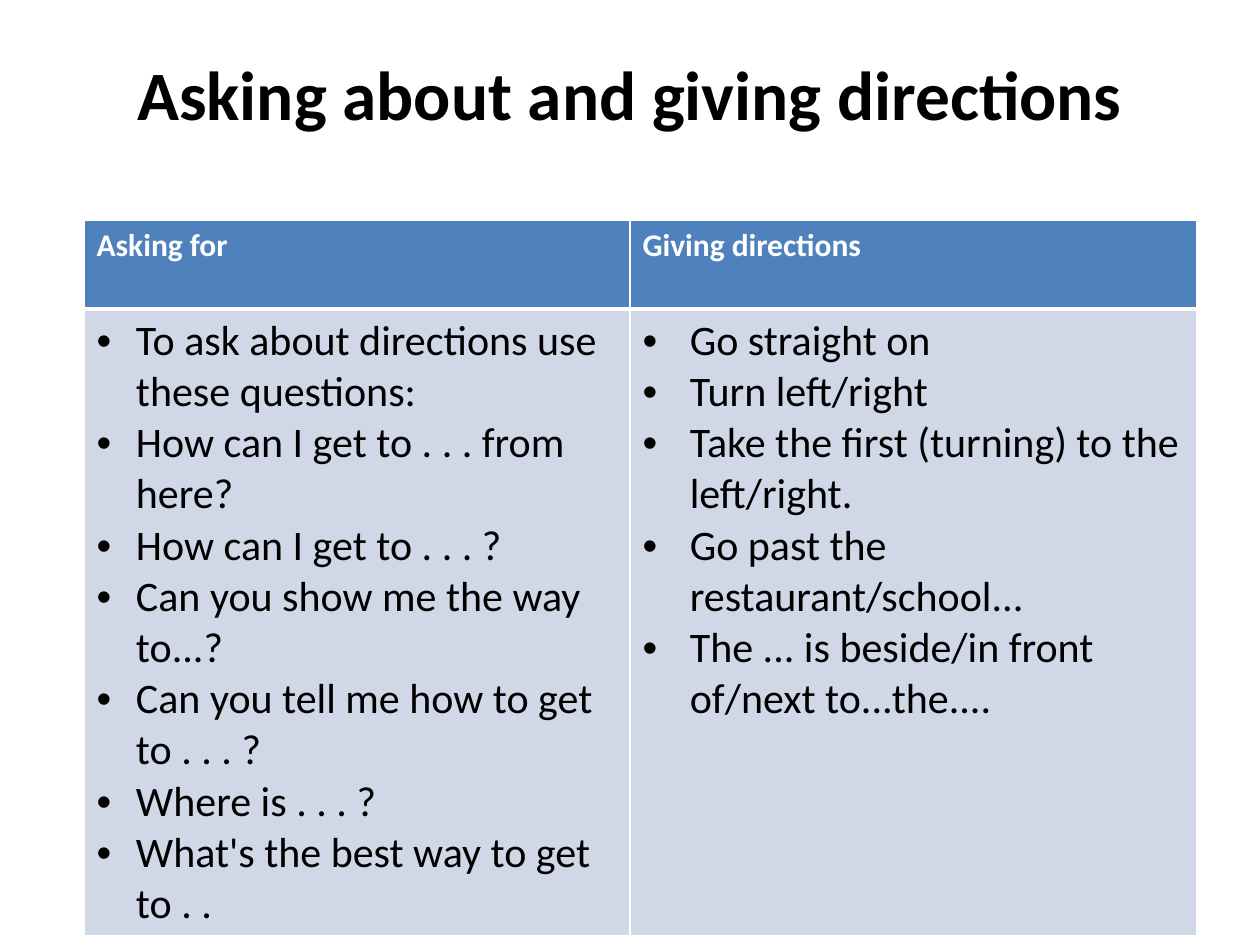
from pptx import Presentation
from pptx.dml.color import RGBColor
from pptx.enum.text import MSO_ANCHOR, PP_ALIGN
from pptx.oxml import parse_xml
from pptx.oxml.ns import nsdecls
from pptx.util import Pt

COLORS = {"text": "000000", "white": "FFFFFF", "header": "4F81BD", "body": "D0D8E8"}

# heading, column width, bullet indent, phrases
COLUMNS = [
    ("Asking for", 312, 22.5, [
        "To ask about directions use these questions:",
        "How can I get to . . . from here?",
        "How can I get to . . . ?",
        "Can you show me the way to...?",
        "Can you tell me how to get to . . . ?",
        "Where is . . . ?",
        "What's the best way to get to . .",
    ]),
    ("Giving directions", 324, 27, [
        "Go straight on",
        "Turn left/right",
        "Take the first (turning) to the left/right.",
        "Go past the restaurant/school...",
        "The ... is beside/in front of/next to...the....",
    ]),
]
ROW_HEIGHTS = [50.5, 358]


def set_font(p, size, color, bold):
    p.font.name = "Calibri"
    p.font.size = Pt(size)
    p.font.bold = bold
    p.font.color.rgb = RGBColor.from_string(COLORS[color])


def style_cell(cell, fill, top, bottom):
    """Fill the cell and draw white borders; top and bottom are line widths."""
    cell.fill.solid()
    cell.fill.fore_color.rgb = RGBColor.from_string(COLORS[fill])
    tcPr = cell._tc.get_or_add_tcPr()
    for i, (side, width) in enumerate([("L", 1), ("R", 1), ("T", top), ("B", bottom)]):
        tcPr.insert(i, parse_xml(
            f'<a:ln{side} {nsdecls("a")} w="{Pt(width)}"><a:solidFill>'
            f'<a:srgbClr val="{COLORS["white"]}"/></a:solidFill></a:ln{side}>'))


prs = Presentation()
prs.slide_width, prs.slide_height = Pt(720), Pt(540)
s = prs.slides.add_slide(prs.slide_layouts[6])

title = s.shapes.add_textbox(Pt(36), Pt(21.6), Pt(648), Pt(62.6))
tf = title.text_frame
tf.word_wrap = True
tf.vertical_anchor = MSO_ANCHOR.MIDDLE
p = tf.paragraphs[0]
p.text = "Asking about and giving directions"
p.alignment = PP_ALIGN.CENTER
set_font(p, 39.6, "text", True)

table = s.shapes.add_table(2, len(COLUMNS), Pt(48), Pt(126),
                           Pt(sum(c[1] for c in COLUMNS)), Pt(sum(ROW_HEIGHTS))).table
for row, height in zip(table.rows, ROW_HEIGHTS):
    row.height = Pt(height)

for col, (heading, width, indent, phrases) in enumerate(COLUMNS):
    table.columns[col].width = Pt(width)

    head = table.cell(0, col)
    style_cell(head, "header", 1, 3)
    p = head.text_frame.paragraphs[0]
    p.text = heading
    set_font(p, 18, "white", True)

    body = table.cell(1, col)
    style_cell(body, "body", 3, 1)
    body.text_frame.text = "\n".join(phrases)
    for p in body.text_frame.paragraphs:
        set_font(p, 24, "text", False)
        pPr = p._p.get_or_add_pPr()
        pPr.set("marL", str(Pt(indent)))
        pPr.set("indent", str(-Pt(indent)))
        bullet = [f'<a:buFont {nsdecls("a")} typeface="Arial"/>',
                  f'<a:buChar {nsdecls("a")} char="•"/>']
        for i, xml in enumerate(bullet):
            pPr.insert(i, parse_xml(xml))

prs.save("out.pptx")
